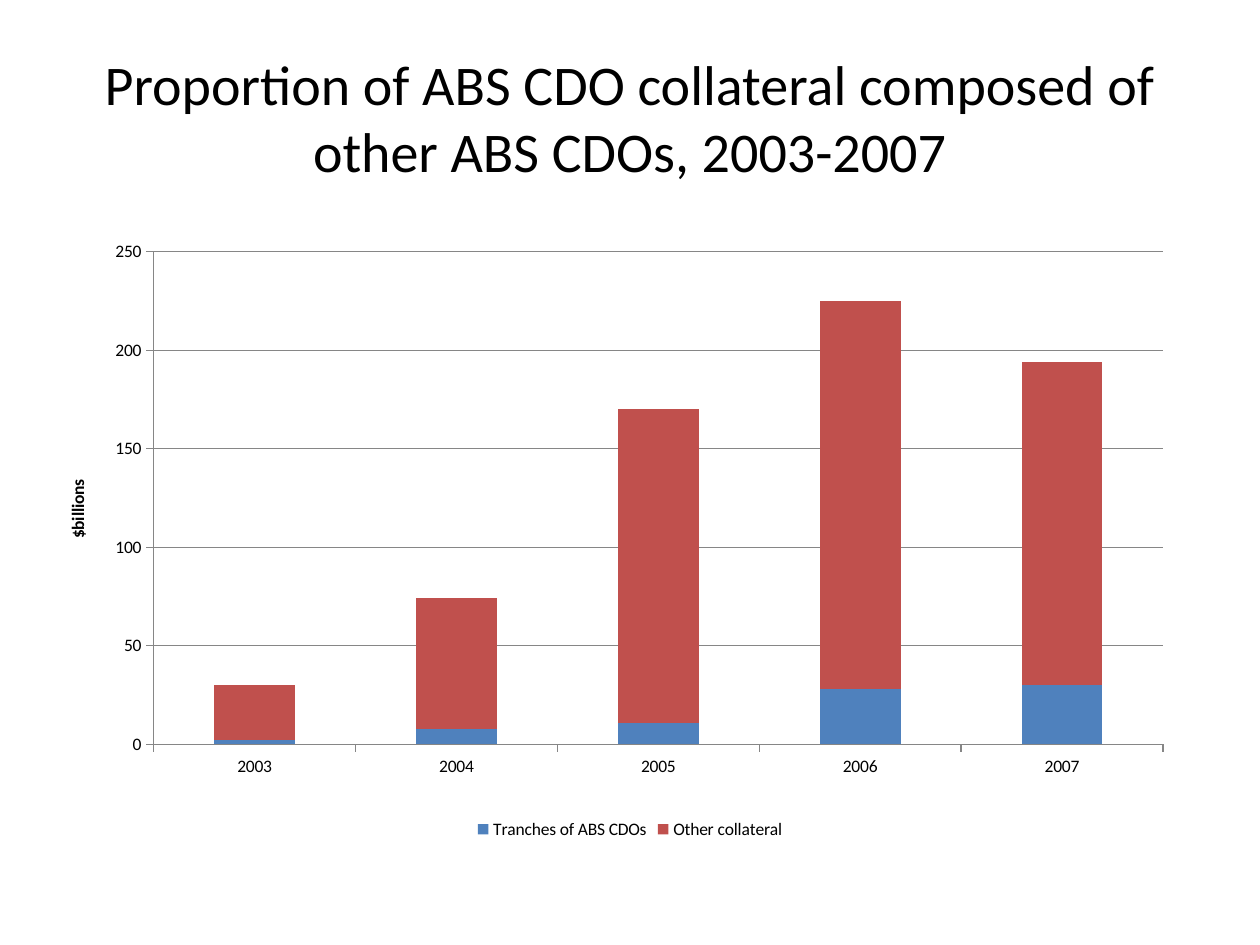
"""Build a slide with a stacked column chart of ABS CDO collateral."""
from dataclasses import dataclass

from lxml import etree
from pptx import Presentation
from pptx.chart.chart import Chart
from pptx.chart.data import CategoryChartData
from pptx.dml.color import RGBColor
from pptx.enum.chart import XL_CHART_TYPE, XL_LEGEND_POSITION, XL_TICK_MARK
from pptx.enum.text import MSO_ANCHOR, PP_ALIGN
from pptx.oxml.ns import qn
from pptx.util import Inches, Pt

STACKED = XL_CHART_TYPE.COLUMN_STACKED
BOTTOM = XL_LEGEND_POSITION.BOTTOM
OUTSIDE = XL_TICK_MARK.OUTSIDE
MIDDLE = MSO_ANCHOR.MIDDLE
CENTER = PP_ALIGN.CENTER
BLACK, GRAY = "000000", "868686"
YEARS = ["2003", "2004", "2005", "2006", "2007"]
PLOT = {"layoutTarget": "inner", "xMode": "edge", "yMode": "edge",
        "x": 0.08, "y": 0.05, "w": 0.89, "h": 0.79}
SCALE = {"minimum_scale": 0, "maximum_scale": 250, "major_unit": 50,
         "has_major_gridlines": True}


@dataclass
class Series:
    """One layer of the stacked columns."""
    name: str
    values: list[int]
    color: str


LAYERS = [
    Series("Tranches of ABS CDOs", [2, 8, 11, 28, 30], "4F81BD"),
    Series("Other collateral", [28, 66, 159, 197, 164], "C0504D"),
]


def paint(target, color: str) -> None:
    """Set a font, fill or line colour from a hex string."""
    target.rgb = RGBColor.from_string(color)


def style(font, size: int, bold: bool = False) -> None:
    """Apply the slide's type style to a font."""
    for key, value in {"name": "Calibri", "size": Pt(size), "bold": bold}.items():
        setattr(font, key, value)
    paint(font.color, BLACK)


def place(shape, left: float, top: float, width: float, height: float) -> None:
    """Move and size a shape in inches."""
    box = {"left": left, "top": top, "width": width, "height": height}
    for key, value in box.items():
        setattr(shape, key, Inches(value))


def add_title(slide, text: str) -> None:
    """Fill the title placeholder."""
    title = slide.shapes.title
    place(title, 0.5, 0.3, 9, 1.25)
    frame = title.text_frame
    frame.text = text
    frame.word_wrap = True
    frame.vertical_anchor = MIDDLE
    frame.paragraphs[0].alignment = CENTER
    style(frame.paragraphs[0].runs[0].font, 32)


def set_line(line) -> None:
    """Draw a thin gray line."""
    line.width = Pt(0.75)
    paint(line.color, GRAY)


def set_plot(chart: Chart) -> None:
    """Fix the inner plot area within the chart."""
    area = chart.element.find(".//" + qn("c:plotArea"))
    for old in area.findall(qn("c:layout")):
        area.remove(old)
    layout = etree.Element(qn("c:layout"))
    manual = etree.SubElement(layout, qn("c:manualLayout"))
    for key, value in PLOT.items():
        etree.SubElement(manual, qn("c:" + key)).set("val", str(value))
    area.insert(0, layout)


def set_axes(chart: Chart) -> None:
    """Format both axes, the gridlines and the axis title."""
    for axis in (chart.category_axis, chart.value_axis):
        axis.major_tick_mark = OUTSIDE
        set_line(axis.format.line)
    axis = chart.value_axis
    for key, value in SCALE.items():
        setattr(axis, key, value)
    set_line(axis.major_gridlines.format.line)
    axis.tick_labels.number_format = "0"
    axis.tick_labels.number_format_is_linked = False
    frame = axis.axis_title.text_frame
    frame.text = "$billions"
    style(frame.paragraphs[0].runs[0].font, 10, True)


def add_chart(slide, layers: list[Series]) -> None:
    """Add the stacked column chart."""
    data = CategoryChartData(number_format="0")
    data.categories = YEARS
    for layer in layers:
        data.add_series(layer.name, layer.values)
    box = [Inches(n) for n in (0.5, 1.75, 9, 4.95)]
    chart = slide.shapes.add_chart(STACKED, *box, data).chart
    style(chart.font, 10)
    chart.has_title = False
    chart.has_legend = True
    chart.legend.position = BOTTOM
    chart.legend.include_in_layout = False
    plot = chart.plots[0]
    for key, value in {"gap_width": 150, "overlap": 100, "vary_by_categories": False}.items():
        setattr(plot, key, value)
    for bar, layer in zip(plot.series, layers):
        bar.format.fill.solid()
        paint(bar.format.fill.fore_color, layer.color)
    set_axes(chart)
    set_plot(chart)


def main() -> None:
    """Build and save the deck."""
    deck = Presentation()
    deck.slide_width, deck.slide_height = Inches(10), Inches(7.5)
    slide = deck.slides.add_slide(deck.slide_layouts[5])
    add_title(slide, "Proportion of ABS CDO collateral composed of other ABS CDOs, 2003-2007")
    add_chart(slide, LAYERS)
    deck.save("out.pptx")


if __name__ == "__main__":
    main()
